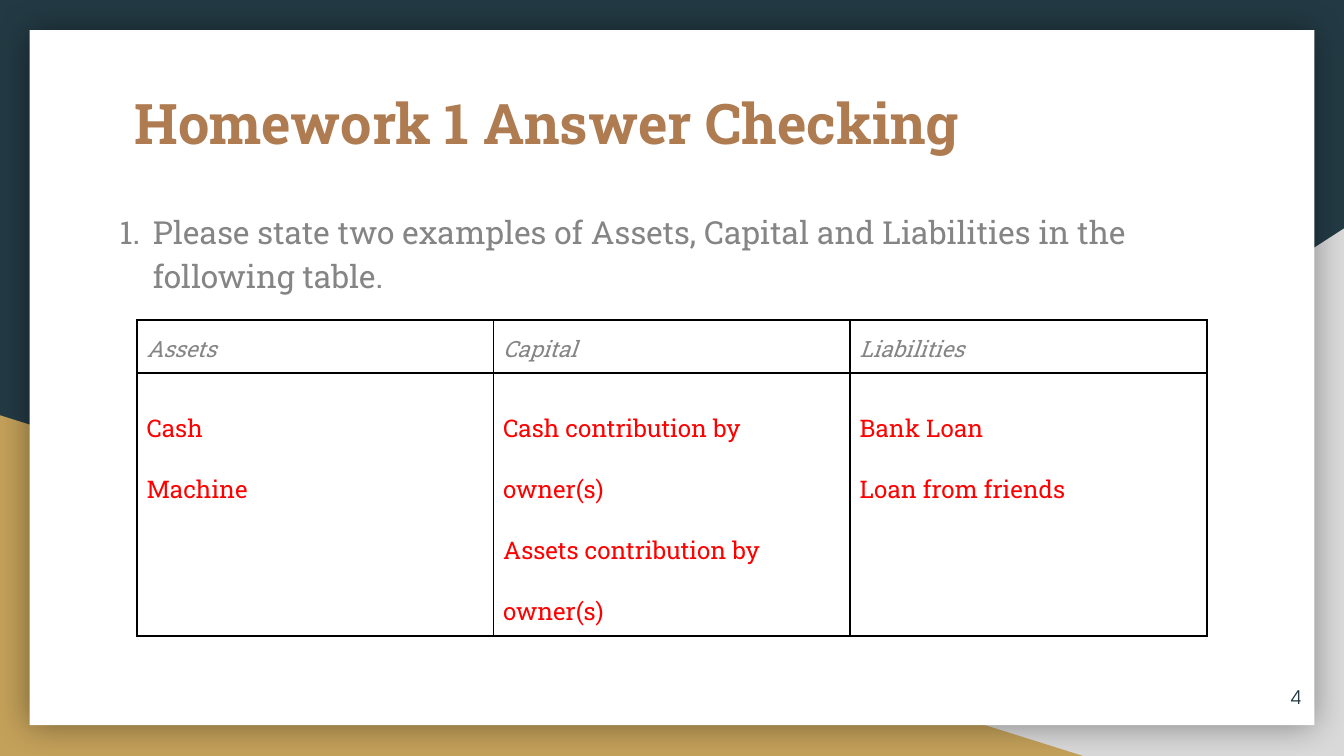
"""Build the homework answer slide with its table of assets, capital and liabilities."""
import pptx
import pptx.dml.color
import pptx.enum.text
import pptx.oxml
import pptx.oxml.ns
import pptx.util
from lxml import etree

Cm, Pt = pptx.util.Cm, pptx.util.Pt
ANCHOR, ALIGN = pptx.enum.text.MSO_ANCHOR, pptx.enum.text.PP_ALIGN
NS = pptx.oxml.ns.nsdecls("a")

COLORS = {"navy": "233A44", "grey": "D9D9D9", "gold": "C4A15A", "white": "FFFFFF",
          "brown": "AF7B51", "text": "858585", "answer": "FF0000", "line": "000000"}

TITLE = "Homework 1 Answer Checking"
QUESTION = ("1.\tPlease state two examples of Assets, Capital and Liabilities "
            "in the following table.")
PAGE = "4"
ANSWERS = {
    "Assets": ["Cash", "Machine"],
    "Capital": ["Cash contribution by owner(s)", "Assets contribution by owner(s)"],
    "Liabilities": ["Bank Loan", "Loan from friends"],
}

WIDTH, HEIGHT = 25.4, 14.29
TRIANGLES = [
    ("grey", [(WIDTH, HEIGHT), (9.96, HEIGHT), (WIDTH, 4.32)]),
    ("gold", [(0, HEIGHT), (20.47, HEIGHT), (0, 7.85)]),
]
CARD = (0.56, 0.57, 24.28, 13.14)
TABLE = (2.59, 6.05, 20.22, 4.29)
ROWS = (0.81, 3.48)

SLAB = {"name": "Roboto Slab"}
FORMATS = {
    "title": {**SLAB, "size": Pt(30), "bold": True, "color": "brown"},
    "question": {**SLAB, "size": Pt(17), "color": "text"},
    "head": {**SLAB, "size": Pt(12), "italic": True, "color": "text"},
    "answer": {**SLAB, "size": Pt(13), "color": "answer"},
    "page": {"name": "TeX Gyre Adventor", "size": Pt(10), "color": "navy"},
}


def rgb(name):
    return pptx.dml.color.RGBColor.from_string(COLORS[name])


def paint(fill, name):
    fill.solid()
    fill.fore_color.rgb = rgb(name)


def write(tf, lines, style, spacing=1.0):
    for i, line in enumerate(lines):
        p = tf.paragraphs[0] if i == 0 else tf.add_paragraph()
        p.line_spacing = spacing
        r = p.add_run()
        r.text = line
        for key, value in FORMATS[style].items():
            if key == "color":
                r.font.color.rgb = rgb(value)
            else:
                setattr(r.font, key, value)


def add_text(s, box, text, style, spacing=1.0, anchor=ANCHOR.TOP, wrap=True):
    tf = s.shapes.add_textbox(*map(Cm, box)).text_frame
    tf.word_wrap, tf.vertical_anchor = wrap, anchor
    for side in ("left", "top", "right", "bottom"):
        setattr(tf, f"margin_{side}", Cm(0.25))
    write(tf, [text], style, spacing)
    return tf.paragraphs[0]


def add_backdrop(s):
    paint(s.background.fill, "navy")
    for color, points in TRIANGLES:
        start, *rest = [(Cm(x), Cm(y)) for x, y in points]
        builder = s.shapes.build_freeform(*start)
        builder.add_line_segments(rest, close=True)
        sp = builder.convert_to_shape()
        sp.shadow.inherit = False
        paint(sp.fill, color)
        sp.line.fill.background()
    sp = s.shapes.add_shape(1, *map(Cm, CARD))
    sp.shadow.inherit = False
    paint(sp.fill, "white")
    sp.line.fill.background()
    effects = sp._element.spPr.find(pptx.oxml.ns.qn("a:effectLst"))
    effects.append(etree.fromstring(
        f'<a:outerShdw {NS} blurRad="{Pt(18)}" dist="0" dir="0" algn="ctr" rotWithShape="0">'
        f'<a:srgbClr val="{COLORS["line"]}"><a:alpha val="40000"/></a:srgbClr></a:outerShdw>'))


def style_cell(cell):
    for side in ("left", "top", "right", "bottom"):
        setattr(cell, f"margin_{side}", Cm(0.18))
    props = cell._tc.get_or_add_tcPr()
    for edge in ("lnL", "lnR", "lnT", "lnB"):
        props.append(pptx.oxml.parse_xml(
            f'<a:{edge} {NS} w="{Pt(1)}"><a:solidFill><a:srgbClr val="{COLORS["line"]}"/>'
            f'</a:solidFill></a:{edge}>'))
    cell.fill.background()


def add_answers(s):
    table = s.shapes.add_table(len(ROWS), len(ANSWERS), *map(Cm, TABLE)).table
    table.first_row = table.horz_banding = False
    for row, height in zip(table.rows, ROWS):
        row.height = Cm(height)
    for i, (head, lines) in enumerate(ANSWERS.items()):
        table.columns[i].width = Cm(TABLE[2] / len(ANSWERS))
        for j, content in enumerate([([head], "head", 1.15), (lines, "answer", 1.92)]):
            cell = table.cell(j, i)
            style_cell(cell)
            write(cell.text_frame, *content)


def main():
    prs = pptx.Presentation()
    prs.slide_width, prs.slide_height = Cm(WIDTH), Cm(HEIGHT)
    s = prs.slides.add_slide(prs.slide_layouts[6])
    add_backdrop(s)
    add_answers(s)
    p = add_text(s, (2.01, 3.73, 20.22, 2.03), QUESTION, "question", 1.15, ANCHOR.MIDDLE)
    indent = Cm(0.63)
    for key, value in {"marL": indent, "indent": -indent}.items():
        p._p.get_or_add_pPr().set(key, str(value))
    add_text(s, (2.29, 1.42, 20.85, 2.03), TITLE, "title")
    p = add_text(s, (23.9, 12.7, 0.94, 0.94), PAGE, "page", anchor=ANCHOR.MIDDLE, wrap=False)
    p.alignment = ALIGN.RIGHT
    prs.save("out.pptx")


if __name__ == "__main__":
    main()
